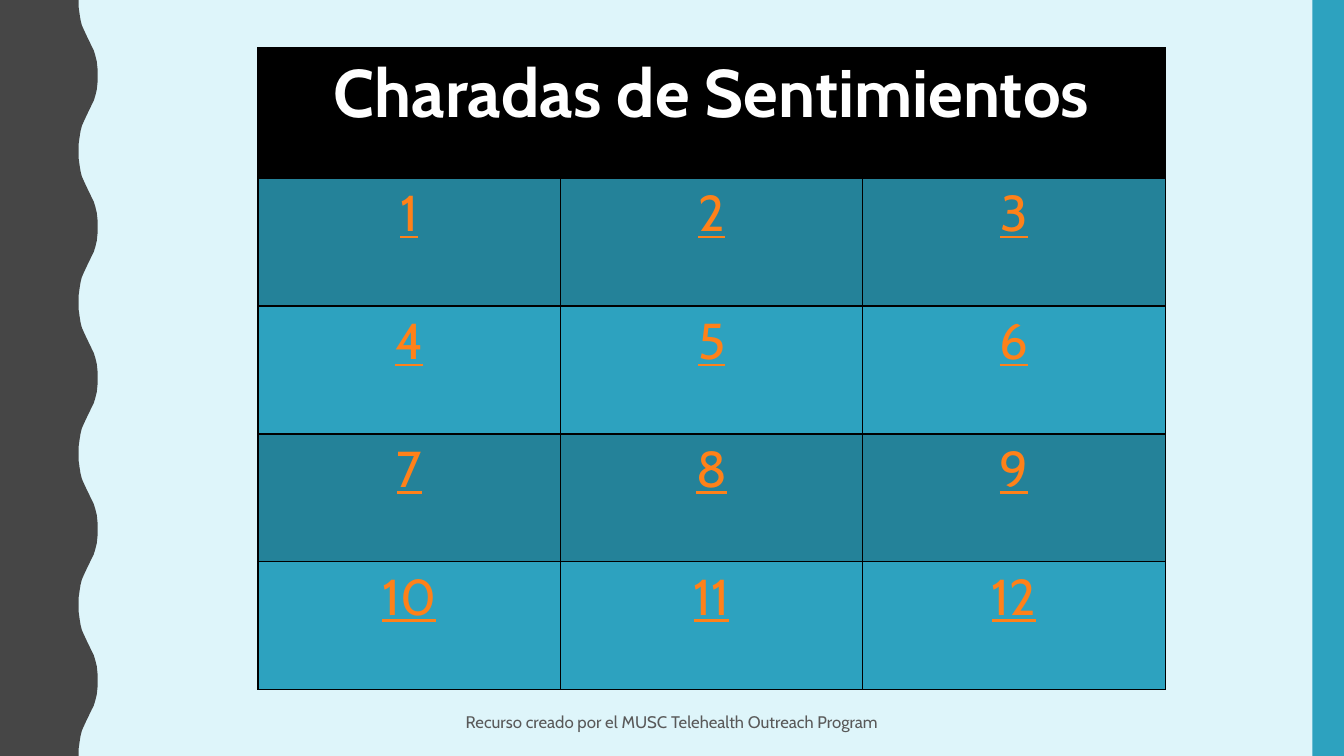
import pptx
import pptx.dml.color
import pptx.enum.shapes
import pptx.enum.text
import pptx.oxml
import pptx.oxml.ns
import pptx.util

Pt = pptx.util.Pt
CENTER = pptx.enum.text.PP_ALIGN.CENTER
COLORS = {
    "background": "DEF5FA",
    "wave": "464646",
    "blue": "2DA2BF",
    "dark_blue": "248299",
    "black": "000000",
    "white": "FFFFFF",
    "orange": "FF8119",
    "gray": "595959",
}


def paint(fill, name):
    fill.solid()
    fill.fore_color.rgb = pptx.dml.color.RGBColor.from_string(COLORS[name])


def write(frame, text, size, color):
    paragraph = frame.paragraphs[0]
    paragraph.text = text
    paragraph.alignment = CENTER
    paragraph.font.name = "Cabin"
    paragraph.font.size = Pt(size)
    paint(paragraph.font.fill, color)
    return paragraph


deck = pptx.Presentation()
deck.slide_width, deck.slide_height = Pt(960), Pt(540)
page = deck.slides.add_slide(deck.slide_layouts[6])
paint(page.background.fill, "background")

# Wavy left edge: half a wave, mirrored and repeated down the page
half_wave = [
    (56.2, 0), (56.2, 5), (56.9, 10), (57.6, 14.4), (58.5, 18),
    (59.8, 21), (61.2, 24), (62.6, 27), (64.1, 30), (65.5, 33),
    (67, 36), (68.1, 39.6), (69.2, 44), (69.7, 49), (69.8, 54),
]
wave_length = 108
full_wave = half_wave + [(x, wave_length - y) for x, y in half_wave[-2::-1]]
edge = [(x, y + wave_length * turn) for turn in range(5) for x, y in full_wave]
outline = page.shapes.build_freeform(0, 0)
outline.add_line_segments([(Pt(x), Pt(y)) for x, y in edge + [(0, 540)]])
wave = outline.convert_to_shape()

# Right band
band = page.shapes.add_shape(
    pptx.enum.shapes.MSO_SHAPE.RECTANGLE, Pt(937.5), 0, Pt(22.5), Pt(540))
for shape, color in ((wave, "wave"), (band, "blue")):
    shape.shadow.inherit = False
    shape.line.fill.background()
    paint(shape.fill, color)

# Table of numbered cards
table = page.shapes.add_table(
    5, 3, Pt(184.3), Pt(34.2), Pt(648), Pt(458.6)).table
for column in table.columns:
    column.width = Pt(216)
for index, row in enumerate(table.rows):
    row.height = Pt(91.4 if index else 93)

for cell in table.iter_cells():
    properties = cell._tc.get_or_add_tcPr()
    for side in ("lnL", "lnR", "lnT", "lnB"):
        properties.append(pptx.oxml.parse_xml(
            f'<a:{side} {pptx.oxml.ns.nsdecls("a")} w="12700"><a:solidFill>'
            f'<a:srgbClr val="{COLORS["black"]}"/></a:solidFill></a:{side}>'))

title = table.cell(0, 0)
title.merge(table.cell(0, 2))
paint(title.fill, "black")
write(title.text_frame, "Charadas de Sentimientos", 48, "white").font.bold = True

for number in range(1, 13):
    row, column = divmod(number - 1, 3)
    cell = table.cell(row + 1, column)
    paint(cell.fill, "blue" if row % 2 else "dark_blue")
    label = write(cell.text_frame, str(number), 36, "orange")
    label.font.bold = False
    label.font.underline = True

# Footer
footer = page.shapes.add_textbox(Pt(318), Pt(502), Pt(324), Pt(27.4)).text_frame
footer.word_wrap = True
footer.vertical_anchor = pptx.enum.text.MSO_ANCHOR.MIDDLE
write(footer, "Recurso creado por el MUSC Telehealth Outreach Program", 12, "gray")

deck.save("out.pptx")
